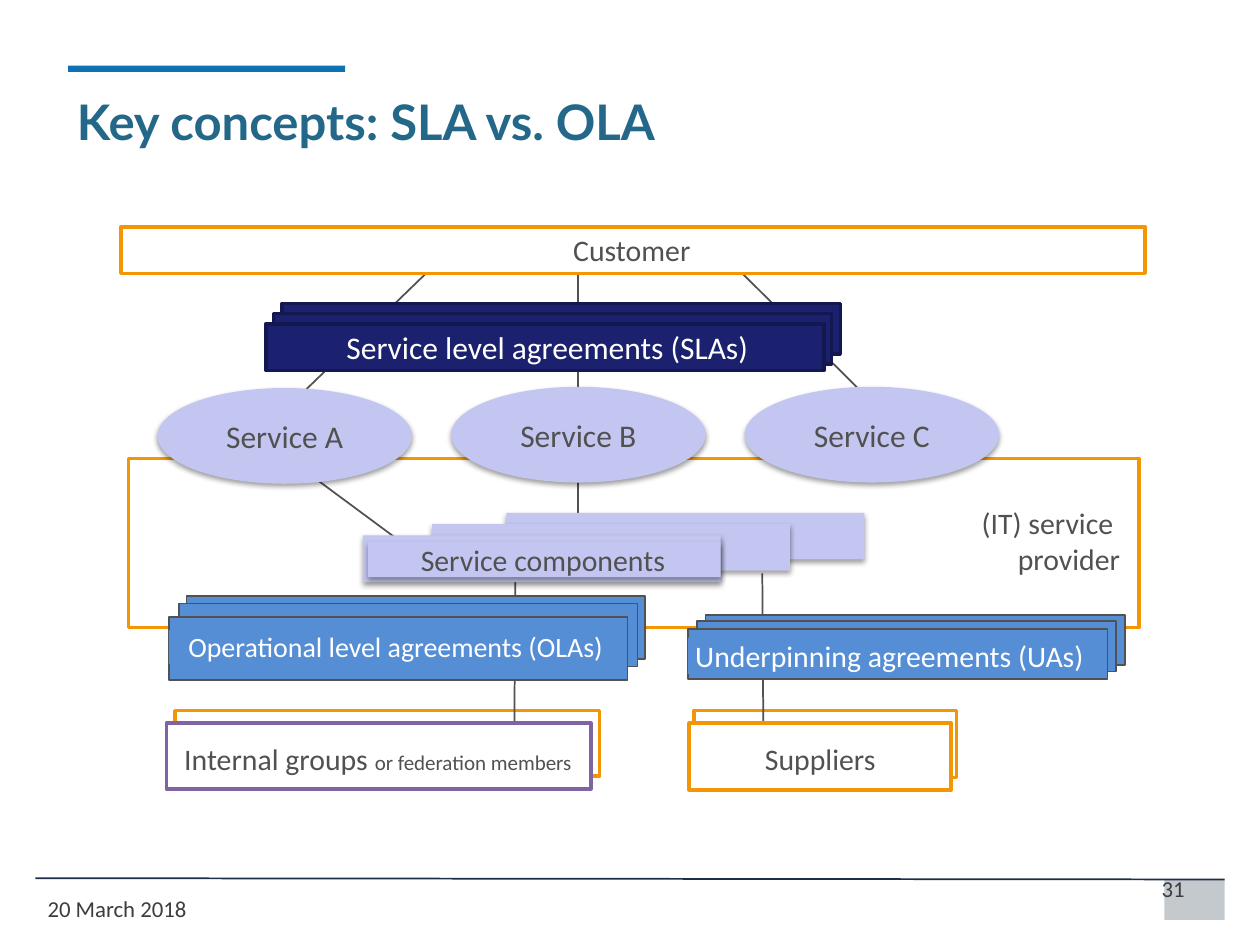
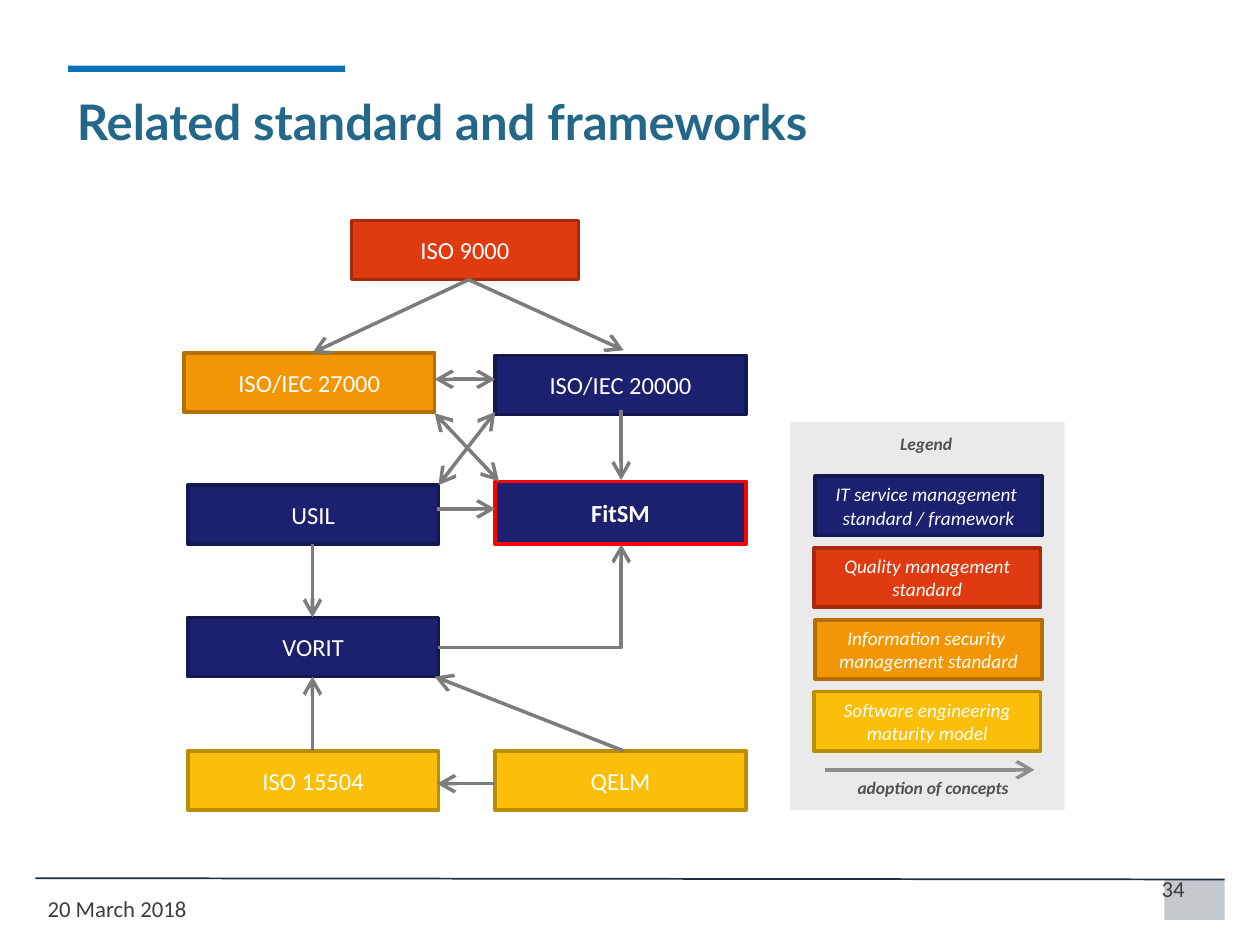
from lxml import etree
from pptx import Presentation
from pptx.dml.color import RGBColor
from pptx.enum import shapes, text as txt
from pptx.oxml.ns import qn
from pptx.util import Inches, Pt


class Theme:
    heading_font, body_font = "Lato", "Calibri"
    title, accent, footer, footer_text = "246889", "0E71B4", "1D2F45", "3D3D3D"
    white, ink, arrow, legend, legend_arrow = "FFFFFF", "515151", "7C7C7C", "EAEAEA", "8E8E8E"
    orange, purple, lilac, blue, red = "F39605", "8064A2", "C3C6F0", "558ED5", "FF0000"
    title_size, service_size, label_size, ola_size = 28, 18, 17, 16
    node_size, footer_size, note_size, key_size, caption_size = 14, 13, 12, 11, 10
    # fill and outline of each family of standards
    itsm = ("1B216E", "141851")
    quality = ("DF3A10", "A52B0C")
    security = ("F39605", "B46F04")
    software = ("FBBE09", "BA8D07")


T = Theme
LEFT, CENTER, RIGHT = txt.PP_ALIGN.LEFT, txt.PP_ALIGN.CENTER, txt.PP_ALIGN.RIGHT
TOP, MIDDLE = txt.MSO_ANCHOR.TOP, txt.MSO_ANCHOR.MIDDLE
RECT, OVAL = shapes.MSO_SHAPE.RECTANGLE, shapes.MSO_SHAPE.OVAL


def put(slide, at, text="", *, holder=None, kind=RECT, fill=None, line=None, line_width=2,
        shadow=False, size=T.label_size, color=T.ink, font=T.body_font, bold=False,
        italic=False, align=CENTER, anchor=TOP, inset=(0.1, 0.05, 0.1, 0.05),
        wrap=True, grow=False):
    """Place a box, or fill the given placeholder, and format its text."""
    box = holder
    if box is None and not (fill or line):
        box = slide.shapes.add_textbox(0, 0, 0, 0)
    elif box is None:
        box = slide.shapes.add_shape(kind, 0, 0, 0, 0)
        box.shadow.inherit = False
        box.fill.solid()
        box.fill.fore_color.rgb = RGBColor.from_string(fill)
        if line:
            box.line.color.rgb = RGBColor.from_string(line)
            box.line.width = Pt(line_width)
        else:
            box.line.fill.background()
    box.left, box.top, box.width, box.height = map(Inches, at)
    if shadow:
        effects = box._element.spPr.find(qn("a:effectLst"))
        outer = etree.SubElement(effects, qn("a:outerShdw"), blurRad="40000",
                                 dist="20000", dir="5400000", rotWithShape="0")
        black = etree.SubElement(outer, qn("a:srgbClr"), val="000000")
        etree.SubElement(black, qn("a:alpha"), val="38000")
    if text:
        frame = box.text_frame
        frame.text = text
        frame.word_wrap = wrap
        frame.auto_size = (txt.MSO_AUTO_SIZE.SHAPE_TO_FIT_TEXT if grow
                           else txt.MSO_AUTO_SIZE.NONE)
        frame.vertical_anchor = anchor
        (frame.margin_left, frame.margin_top,
         frame.margin_right, frame.margin_bottom) = map(Inches, inset)
        for paragraph in frame.paragraphs:
            paragraph.alignment = align
            for run in paragraph.runs:
                run.font.name, run.font.size = font, Pt(size)
                run.font.bold, run.font.italic = bold, italic
                run.font.color.rgb = RGBColor.from_string(color)
    return box


def link(slide, start, end, *, color=T.ink, width=1, ends=(), bent=False):
    """Draw a line; ends lists the ends that carry an arrowhead."""
    kind = shapes.MSO_CONNECTOR.ELBOW if bent else shapes.MSO_CONNECTOR.STRAIGHT
    line = slide.shapes.add_connector(kind, *map(Inches, start + end))
    line.line.color.rgb = RGBColor.from_string(color)
    line.line.width = Pt(width)
    props = line._element.spPr
    if bent:
        props.find(qn("a:prstGeom")).set("prst", "bentConnector2")
    for side in ends:
        etree.SubElement(props.find(qn("a:ln")), qn(f"a:{side}End"),
                         type="arrow", w="lg", len="lg")
    etree.SubElement(props, qn("a:effectLst"))


prs = Presentation()
prs.slide_width, prs.slide_height = Inches(10), Inches(7.5)

# Shared frame: footer, accent bar, title
pages = []
for heading, number in (("Key concepts: SLA vs. OLA", "31"),
                        ("Related standard and frameworks", "34")):
    page = prs.slides.add_slide(prs.slide_layouts[5])
    link(page, (9.72, 6.98), (0.28, 6.97), color=T.footer)
    number_patch = put(page, (9.24, 6.98, 0.48, 0.32), fill=T.footer)
    patch_color = next(number_patch._element.spPr.iter(qn("a:srgbClr")))
    etree.SubElement(patch_color, qn("a:alpha"), val="26000")
    put(page, (0.54, 0.52, 2.2, 0.05), fill=T.accent)
    put(page, (0.51, 0.68, 9.27, 0.63), heading, holder=page.shapes.title, size=T.title_size,
        font=T.heading_font, color=T.title, bold=True, align=LEFT)
    footer_style = dict(size=T.footer_size, color=T.footer_text)
    put(page, (7.17, 6.89, 2.33, 0.4), number, align=RIGHT, **footer_style)
    put(page, (0.28, 7.05, 2.33, 0.4), "20 March 2018", align=LEFT, **footer_style)
    pages.append(page)
agreements, standards = pages

# Slide 1: back cards and provider frame
outlined = dict(fill=T.white, line=T.orange)
for at in ((5.51, 5.64, 2.08, 0.53), (1.39, 5.64, 3.37, 0.52), (1.02, 3.64, 8.02, 1.34)):
    put(agreements, at, **outlined)

# Lines run behind the boxes they join
for start, end in (((4.59, 1.87), (4.59, 4.41)), ((3.64, 1.92), (2.1, 3.41)),
                   ((5.67, 1.95), (7.12, 3.39)), ((6.05, 4.55), (6.06, 6.04)),
                   ((4.09, 4.5), (4.08, 6.2)), ((2.1, 3.5), (3.56, 4.58))):
    link(agreements, start, end)

# Customer and service level agreements
put(agreements, (0.96, 1.8, 8.13, 0.37), "Customer", anchor=MIDDLE,
    inset=(0.04, 0.02, 0.06, 0.02), **outlined)
sla = dict(fill=T.itsm[0], line=T.itsm[1])
for left, top in ((2.24, 2.41), (2.17, 2.49)):
    put(agreements, (left, top, 4.43, 0.4), **sla)
put(agreements, (2.11, 2.57, 4.43, 0.37), "Service level agreements (SLAs)",
    size=T.service_size, color=T.white, anchor=MIDDLE, inset=(0.04, 0, 0, 0), **sla)

# Services
for column, (letter, top) in enumerate(zip("ABC", (3.08, 3.07, 3.07))):
    put(agreements, (1.25 + 2.33 * column, top, 2.02, 0.76), f"Service {letter}", kind=OVAL,
        fill=T.lilac, shadow=True, size=T.service_size, anchor=MIDDLE, inset=(0, 0, 0, 0))

# Stacks of three cards, each with a label on the front one
component = dict(fill=T.lilac, shadow=True)
agreement = dict(fill=T.blue, line=T.ink, line_width=1)
stacks = (
    (component, (2.84, 0.37), ((4.02, 4.07), (3.43, 4.16), (2.88, 4.25)),
     "Service components", (2.92, 4.3, 2.8, 0.28), component),
    (agreement, (3.64, 0.5), ((1.48, 4.73), (1.42, 4.79), (1.34, 4.9)),
     "Operational level agreements (OLAs)", (1.34, 5, 3.62, 0.27),
     dict(fill=T.blue, color=T.white, size=T.ola_size)),
    (agreement, (3.33, 0.4), ((5.6, 4.88), (5.53, 4.93), (5.46, 4.99)),
     "Underpinning agreements (UAs)", (5.46, 5.06, 3.22, 0.29),
     dict(fill=T.blue, color=T.white)),
)
for card, card_size, corners, label, label_at, label_style in stacks:
    for corner in corners:
        put(agreements, corner + card_size, **card)
    put(agreements, label_at, label, inset=(0.04, 0, 0.06, 0), grow=True, **label_style)

# Provider, internal groups and suppliers
caption_box = dict(inset=(0.04, 0, 0.04, 0), grow=True)
put(agreements, (7.74, 4.01, 1.19, 0.57), "(IT) service \nprovider", align=RIGHT,
    **caption_box)
put(agreements, (1.32, 5.74, 3.37, 0.52), fill=T.white, line=T.purple)
groups = put(agreements, (1.32, 5.88, 3.36, 0.29), "Internal groups ", **caption_box)
members = groups.text_frame.paragraphs[0].add_run()
members.text = "or federation members"
members.font.name, members.font.size = T.body_font, Pt(T.note_size)
members.font.color.rgb = RGBColor.from_string(T.ink)
put(agreements, (5.47, 5.74, 2.08, 0.53), **outlined)
put(agreements, (5.47, 5.88, 2.08, 0.28), "Suppliers", **caption_box)

# Slide 2: standards and frameworks
put(standards, (6.27, 3.35, 2.18, 3.08), fill=T.legend)
tight = (0.07, 0.04, 0.07, 0.04)
node = dict(color=T.white, anchor=MIDDLE, inset=tight, wrap=False)
for name, left, top, width, (fill, line) in (
        ("ISO 9000", 2.79, 1.75, 1.8, T.quality),
        ("ISO/IEC 27000", 1.46, 2.8, 1.99, T.security),
        ("ISO/IEC 20000", 3.93, 2.82, 1.99, T.itsm),
        ("USIL", 1.49, 3.85, 1.99, T.itsm),
        ("VORIT", 1.49, 4.9, 1.99, T.itsm),
        ("ISO 15504", 1.49, 5.96, 1.99, T.software),
        ("QELM", 3.93, 5.96, 1.99, T.software)):
    put(standards, (left, top, width, 0.47), name, fill=fill, line=line,
        size=T.node_size, **node)
put(standards, (3.93, 3.82, 1.99, 0.5), "FitSM", fill=T.itsm[0], line=T.red,
    size=T.node_size, bold=True, **node)

# Adoption of concepts: one-way, mutual, and the bent arrow to FitSM
adoption = dict(color=T.arrow, width=2)
for start, end in (((4.93, 3.25), (4.93, 3.81)), ((2.48, 4.32), (2.48, 4.9)),
                   ((2.48, 5.96), (2.48, 5.37)), ((3.93, 6.22), (3.47, 6.22)),
                   ((4.95, 5.96), (3.45, 5.37)), ((3.47, 4.04), (3.93, 4.04)),
                   ((3.72, 2.22), (4.95, 2.78)), ((3.72, 2.22), (2.48, 2.8))):
    link(standards, start, end, ends=["tail"], **adoption)
for start, end in (((3.48, 3.85), (3.93, 3.27)), ((3.45, 3.01), (3.93, 3.01)),
                   ((3.45, 3.28), (3.96, 3.82))):
    link(standards, start, end, ends=["head", "tail"], **adoption)
link(standards, (3.48, 5.14), (4.93, 4.32), ends=["tail"], bent=True, **adoption)

# Legend
caption = dict(size=T.caption_size, bold=True, italic=True, inset=tight, grow=True)
put(standards, (6.36, 3.4, 1.98, 0.25), "Legend", **caption)
for row, (meaning, left, (fill, line)) in enumerate((
        ("IT service management \nstandard / framework", 6.47, T.itsm),
        ("Quality management\nstandard", 6.46, T.quality),
        ("Information security \nmanagement standard", 6.47, T.security),
        ("Software engineering\nmaturity model", 6.46, T.software))):
    put(standards, (left, 3.78 + 0.57 * row, 1.8, 0.47), meaning, fill=fill, line=line,
        size=T.key_size, italic=True, **node)
link(standards, (6.55, 6.11), (8.21, 6.11), color=T.legend_arrow, width=2, ends=["tail"])
put(standards, (6.27, 6.13, 2.27, 0.25), "adoption of concepts", **caption)

prs.save("out.pptx")
